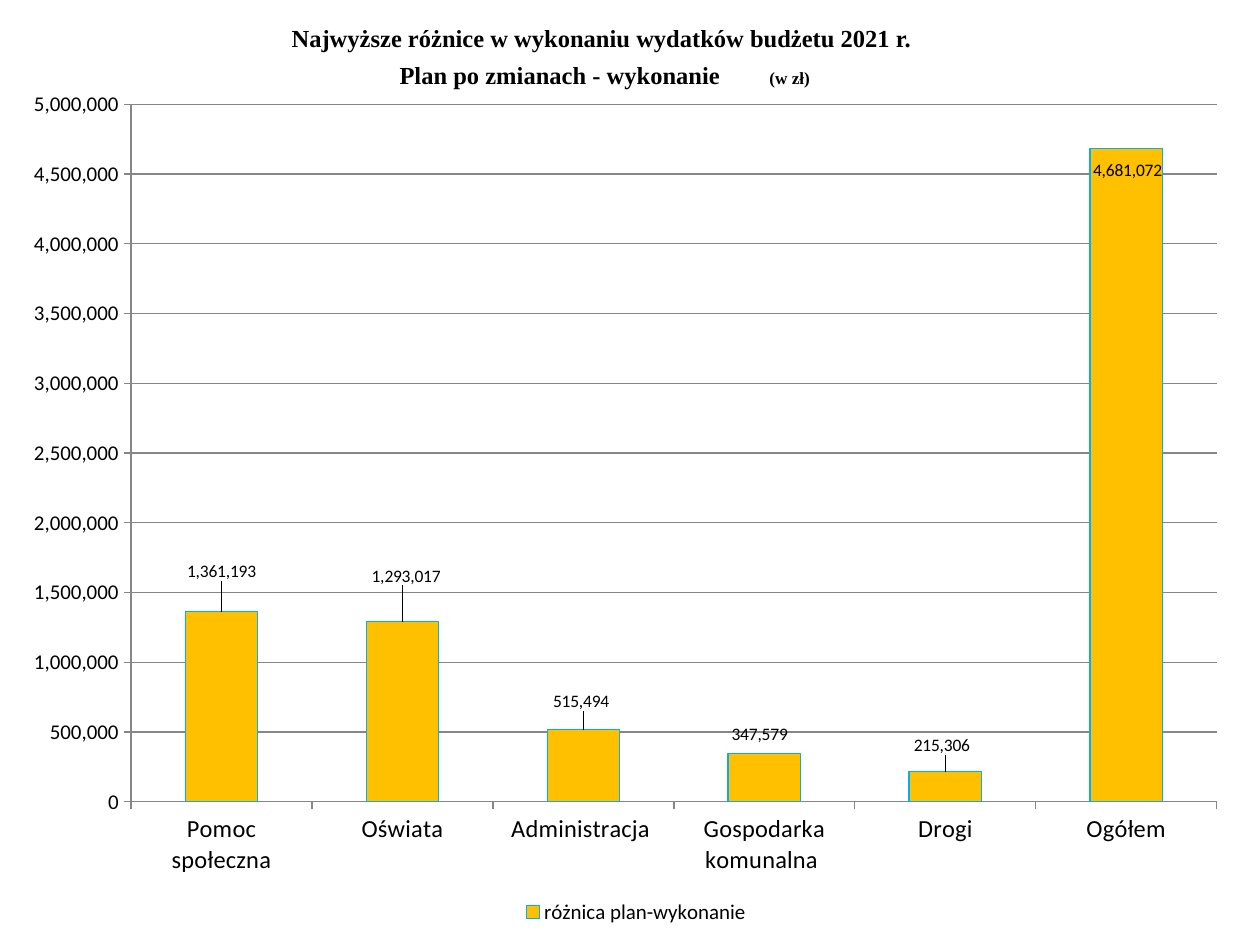
from dataclasses import dataclass

import pptx
import pptx.chart.data
import pptx.dml.color
import pptx.enum.chart
import pptx.enum.text
import pptx.oxml
import pptx.oxml.ns
import pptx.util

Pt = pptx.util.Pt
RGB = pptx.dml.color.RGBColor
NUMBER_FORMAT = "#,##0"


@dataclass(frozen=True)
class Theme:
    text: RGB = RGB(0, 0, 0)
    bar: RGB = RGB(0xFF, 0xC0, 0x00)
    outline: RGB = RGB(0x00, 0xB0, 0xF0)
    grid: RGB = RGB(0x86, 0x86, 0x86)
    title_font: str = "Times New Roman"
    chart_font: str = "Calibri"
    title: float = 14
    unit: float = 9.8
    category: float = 14
    scale: float = 12
    label: float = 10


@dataclass(frozen=True)
class Bar:
    """One budget area; dx and dy shift its label, in fractions of the chart."""
    name: str
    value: int
    dx: float
    dy: float


@dataclass(frozen=True)
class TitleRun:
    text: str
    size: float
    spacing: int = 0  # extra character spacing, hundredths of a point


THEME = Theme()
BARS = [
    Bar("Pomoc społeczna", 1361193, 0, -0.03),
    Bar("Oświata", 1293017, 0.003, -0.036),
    Bar("Administracja ", 515494, -0.002, -0.016),
    Bar("Gospodarka komunalna ", 347579, -0.004, -0.005),
    Bar("Drogi", 215306, -0.003, -0.013),
    Bar("Ogółem", 4681072, 0.001, 0.043),
]
TITLE = [
    [TitleRun("Najwyższe różnice w wykonaniu wydatków budżetu 2021 r. ", THEME.title)],
    [TitleRun("Plan po zmianach - wykonanie", THEME.title),
     TitleRun(" ", THEME.title, 2450),
     TitleRun("(w zł)", THEME.unit)],
]


def set_attrs(target, values: dict) -> None:
    for name, value in values.items():
        setattr(target, name, value)


def style_font(font, size: float, name: str, bold: bool = False) -> None:
    set_attrs(font, {"size": Pt(size), "name": name, "bold": bold})
    font.color.rgb = THEME.text


def style_line(line, color: RGB, width: float = 0.75) -> None:
    line.color.rgb = color
    line.width = Pt(width)


def manual_layout(**values: float):
    """Return a c:layout element; names ending in Mode hold words."""
    items = "".join(f'<c:{k} val="{v}"/>' for k, v in values.items())
    return pptx.oxml.parse_xml(
        f'<c:layout {pptx.oxml.ns.nsdecls("c")}>'
        f"<c:manualLayout>{items}</c:manualLayout></c:layout>")


def add_title(s) -> None:
    tf = s.shapes.add_textbox(Pt(93.6), Pt(9.4), Pt(504), Pt(38.2)).text_frame
    set_attrs(tf, {"word_wrap": True, "margin_top": Pt(4), "margin_bottom": 0})
    for i, runs in enumerate(TITLE):
        p = tf.add_paragraph() if i else tf.paragraphs[0]
        p.alignment = pptx.enum.text.PP_ALIGN.CENTER
        p.space_before = Pt(3.9 if i else 0)
        for item in runs:
            r = p.add_run()
            r.text = item.text
            style_font(r.font, item.size, THEME.title_font, bold=True)
            if item.spacing:
                r._r.get_or_add_rPr().set("spc", str(item.spacing))


def style_axes(chart) -> None:
    cat, val = chart.category_axis, chart.value_axis
    for axis, size in ((cat, THEME.category), (val, THEME.scale)):
        axis.major_tick_mark = pptx.enum.chart.XL_TICK_MARK.OUTSIDE
        style_font(axis.tick_labels.font, size, THEME.chart_font)
        style_line(axis.format.line, THEME.grid)
    set_attrs(val, {"minimum_scale": 0, "maximum_scale": 5_000_000,
                    "major_unit": 500_000, "has_major_gridlines": True})
    style_line(val.major_gridlines.format.line, THEME.grid)
    set_attrs(val.tick_labels, {"number_format": NUMBER_FORMAT,
                                "number_format_is_linked": False})


def style_labels(series) -> None:
    labels = series.data_labels
    outside = pptx.enum.chart.XL_LABEL_POSITION.OUTSIDE_END
    set_attrs(labels, {"show_value": True, "position": outside,
                       "number_format": NUMBER_FORMAT,
                       "number_format_is_linked": False})
    style_font(labels.font, THEME.label, THEME.chart_font)
    for i in range(len(BARS)):
        label = series.points[i].data_label
        style_font(label.font, THEME.label, THEME.chart_font)
        label.position = outside
    # Shift each label from its default place
    for bar, element in zip(BARS, series._element.xpath(".//c:dLbl")):
        element.insert(1, manual_layout(x=bar.dx, y=bar.dy))


def add_budget_chart(s) -> None:
    data = pptx.chart.data.CategoryChartData(number_format=NUMBER_FORMAT)
    data.categories = [bar.name for bar in BARS]
    data.add_series("różnica plan-wykonanie", [bar.value for bar in BARS])
    chart = s.shapes.add_chart(
        pptx.enum.chart.XL_CHART_TYPE.COLUMN_CLUSTERED,
        Pt(19.4), Pt(47.5), Pt(686.2), Pt(483.8), data).chart
    set_attrs(chart, {"has_title": False, "has_legend": True})
    style_font(chart.font, 18, THEME.chart_font)
    style_axes(chart)

    # Bars
    plot = chart.plots[0]
    set_attrs(plot, {"gap_width": 150, "vary_by_categories": False})
    series = plot.series[0]
    series.format.fill.solid()
    series.format.fill.fore_color.rgb = THEME.bar
    style_line(series.format.line, THEME.outline)
    style_labels(series)

    # Legend
    set_attrs(chart.legend, {
        "position": pptx.enum.chart.XL_LEGEND_POSITION.BOTTOM,
        "include_in_layout": False})
    style_font(chart.legend.font, THEME.scale, THEME.chart_font)

    # Plot area
    area = chart._chartSpace.xpath("c:chart/c:plotArea")[0]
    for old in area.xpath("c:layout"):
        area.remove(old)
    area.insert(0, manual_layout(layoutTarget="inner", xMode="edge", yMode="edge",
                                 x=0.078, y=0.025, w=0.907, h=0.824))


def main() -> None:
    prs = pptx.Presentation()
    set_attrs(prs, {"slide_width": Pt(720), "slide_height": Pt(540)})
    s = prs.slides.add_slide(prs.slide_layouts[6])
    add_title(s)
    add_budget_chart(s)
    prs.save("out.pptx")


if __name__ == "__main__":
    main()
